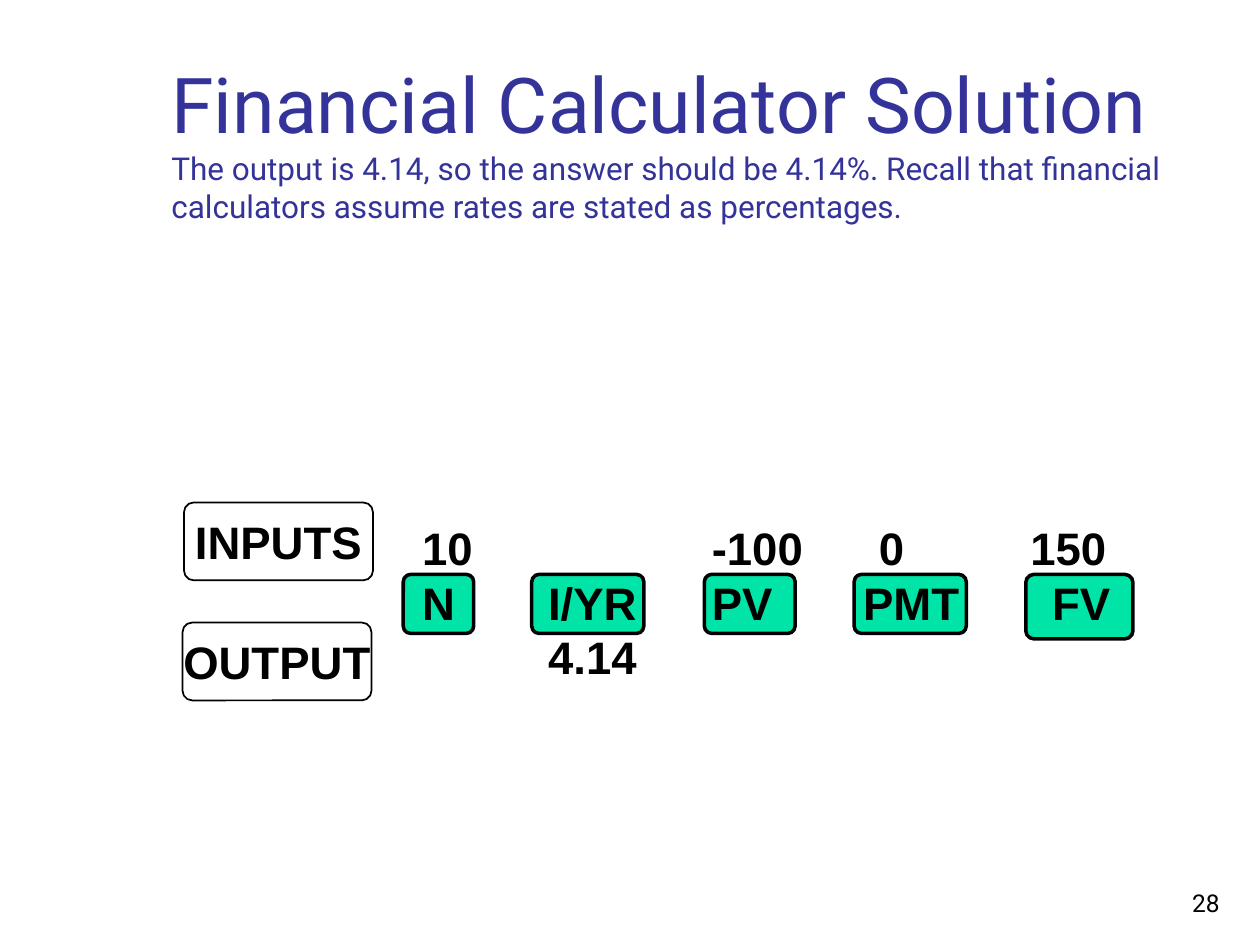
from lxml import etree
from pptx import Presentation
from pptx.dml.color import RGBColor
from pptx.enum.shapes import MSO_SHAPE
from pptx.enum.text import MSO_ANCHOR, MSO_AUTO_SIZE, PP_ALIGN
from pptx.oxml.ns import qn
from pptx.util import Cm, Pt

ROUNDED = MSO_SHAPE.ROUNDED_RECTANGLE
BOTTOM, MIDDLE = MSO_ANCHOR.BOTTOM, MSO_ANCHOR.MIDDLE
LEFT, CENTER, RIGHT = PP_ALIGN.LEFT, PP_ALIGN.CENTER, PP_ALIGN.RIGHT
NO_AUTOFIT = MSO_AUTO_SIZE.NONE

BLACK = RGBColor(0x00, 0x00, 0x00)
INDIGO = RGBColor(0x33, 0x33, 0x99)
MINT = RGBColor(0x00, 0xE4, 0xA8)

TITLE_ONLY = 5
KEY_TOP = 11.58
KEYS = [
    (8.13, 1.42, 1.19),
    (10.72, 2.26, 1.19),
    (14.2, 1.83, 1.19),
    (17.22, 2.26, 1.19),
    (20.68, 2.16, 1.3),
]
ROWS = [
    [(5.08, "10"), (10.92, "-100"), (14.29, "0"), (17.34, "150")],
    [(5.08, "N"), (7.62, "I/YR"), (10.92, "PV"), (13.97, "PMT"), (17.78, "FV")],
    [(7.62, "4.14")],
]
LABELS = [(3.71, 10.13, "INPUTS"), (3.68, 12.55, "OUTPUT")]


class SlideBuilder:
    heading_font = "Roboto"
    key_font = "Arial"
    key_size = 26

    def __init__(self, slide):
        self.slide = slide

    def format_run(self, run, name, size, color, bold=False):
        run.font.name = name
        run.font.size = Pt(size)
        run.font.color.rgb = color
        run.font.bold = bold

    def format_key_text(self, paragraph):
        for run in paragraph.runs:
            self.format_run(run, self.key_font, self.key_size, BLACK, True)

    def add_title(self, heading, detail):
        title = self.slide.shapes.title
        title.left, title.top = Cm(3.2), Cm(0.6)
        title.width, title.height = Cm(21.64), Cm(4.06)
        frame = title.text_frame
        frame.text = f"{heading}\v{detail}"
        frame.auto_size = NO_AUTOFIT
        frame.vertical_anchor = BOTTOM
        paragraph = frame.paragraphs[0]
        paragraph.alignment = LEFT
        for run, size in zip(paragraph.runs, (44, 18)):
            self.format_run(run, self.heading_font, size, INDIGO)

    def add_box(self, left, top, width, height, line_width, fill=None):
        shape = self.slide.shapes.add_shape(
            ROUNDED, Cm(left), Cm(top), Cm(width), Cm(height))
        shape.adjustments[0] = 0.125
        shape.shadow.inherit = False
        if fill is None:
            shape.fill.background()
        else:
            shape.fill.solid()
            shape.fill.fore_color.rgb = fill
        shape.line.color.rgb = BLACK
        shape.line.width = Pt(line_width)
        return shape

    def add_label(self, left, top, text):
        frame = self.add_box(left, top, 3.81, 1.57, 1).text_frame
        frame.text = text
        frame.word_wrap = False
        frame.vertical_anchor = MIDDLE
        frame.paragraphs[0].alignment = CENTER
        self.format_key_text(frame.paragraphs[0])

    def add_text_box(self, left, top, width, height):
        shape = self.slide.shapes.add_textbox(
            Cm(left), Cm(top), Cm(width), Cm(height))
        shape.text_frame.word_wrap = True
        return shape.text_frame

    def add_tabbed_rows(self, rows):
        frame = self.add_text_box(3.18, 10.36, 20.98, 3.56)
        frame.text = "\n".join(
            "".join(f"\t{text}" for _, text in row) for row in rows)
        for paragraph, row in zip(frame.paragraphs, rows):
            properties = paragraph._p.get_or_add_pPr()
            tabs = etree.SubElement(properties, qn("a:tabLst"))
            for position, _ in row:
                etree.SubElement(
                    tabs, qn("a:tab"), pos=str(Cm(position)), algn="l")
            self.format_key_text(paragraph)

    def add_page_number(self, number):
        frame = self.add_text_box(19.56, 17.35, 5.28, 1.27)
        frame.text = number
        frame.vertical_anchor = BOTTOM
        frame.paragraphs[0].alignment = RIGHT
        self.format_run(
            frame.paragraphs[0].runs[0], self.heading_font, 14, BLACK)


def main():
    presentation = Presentation()
    presentation.slide_width, presentation.slide_height = Cm(25.4), Cm(19.05)
    layout = presentation.slide_layouts[TITLE_ONLY]
    builder = SlideBuilder(presentation.slides.add_slide(layout))
    builder.add_title(
        "Financial Calculator Solution",
        "The output is 4.14, so the answer should be 4.14%. Recall that "
        "financial calculators assume rates are stated as percentages.")
    builder.add_page_number("28")
    for left, width, height in KEYS:
        builder.add_box(left, KEY_TOP, width, height, 2, MINT)
    builder.add_tabbed_rows(ROWS)
    for left, top, text in LABELS:
        builder.add_label(left, top, text)
    presentation.save("out.pptx")


if __name__ == "__main__":
    main()
